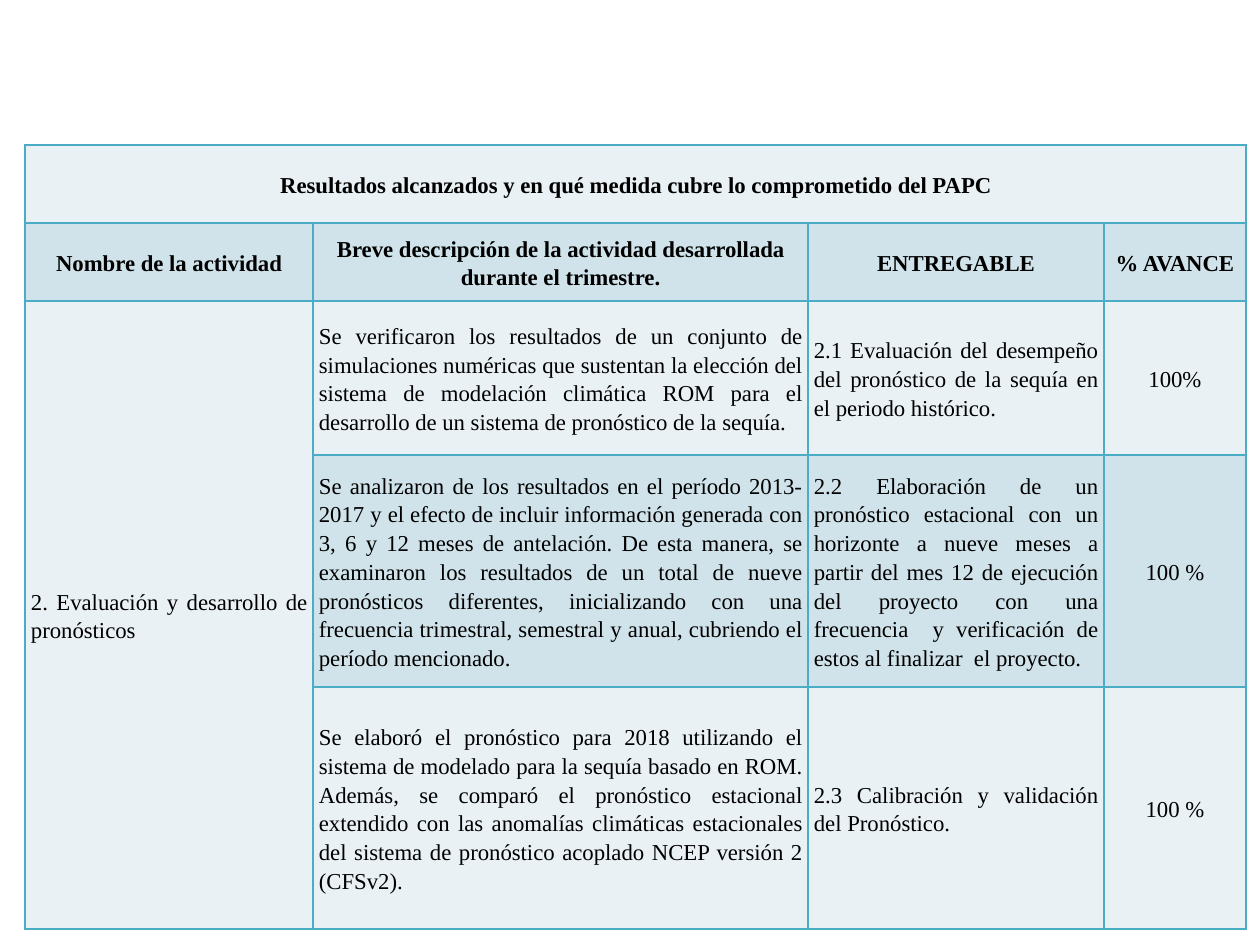
from dataclasses import dataclass

from lxml import etree
from pptx import Presentation
from pptx.dml.color import RGBColor
from pptx.enum.text import MSO_ANCHOR, PP_ALIGN
from pptx.oxml.ns import qn
from pptx.util import Pt

CENTER = PP_ALIGN.CENTER
JUSTIFY = PP_ALIGN.JUSTIFY
MIDDLE = MSO_ANCHOR.MIDDLE

EMU_PER_PX = 914400 / 126
BLANK_LAYOUT = 6


def px(length):
    return round(length * EMU_PER_PX)


@dataclass(frozen=True)
class Theme:
    font: str = "Times New Roman"
    size: int = 13
    text: str = "000000"
    light_band: str = "E9F1F5"
    dark_band: str = "D0E3EA"
    border: str = "4BACC6"
    border_width: int = 1


def apply_format(target, values):
    for name, value in values.items():
        setattr(target, name, value)


class SlideBuilder:
    """Holds the theme and the slide being built."""

    def __init__(self, slide, theme):
        self.slide = slide
        self.theme = theme

    def add_borders(self, cell):
        properties = cell._tc.get_or_add_tcPr()
        for side in ("lnL", "lnR", "lnT", "lnB"):
            line = etree.SubElement(properties, qn(f"a:{side}"))
            line.set("w", str(Pt(self.theme.border_width)))
            fill = etree.SubElement(line, qn("a:solidFill"))
            etree.SubElement(fill, qn("a:srgbClr")).set("val", self.theme.border)

    def style_cell(self, cell, fill):
        self.add_borders(cell)
        cell.fill.solid()
        cell.fill.fore_color.rgb = RGBColor.from_string(fill)
        apply_format(cell, {
            "vertical_anchor": MIDDLE,
            "margin_left": px(6), "margin_right": px(6),
            "margin_top": 0, "margin_bottom": 0,
        })

    def write_cell(self, cell, text, alignment, bold):
        paragraph = cell.text_frame.paragraphs[0]
        apply_format(paragraph, {
            "alignment": alignment, "line_spacing": 1.15, "space_after": Pt(6),
        })
        run = paragraph.add_run()
        run.text = text
        apply_format(run.font, {
            "name": self.theme.font, "size": Pt(self.theme.size), "bold": bold,
        })
        run.font.color.rgb = RGBColor.from_string(self.theme.text)

    def add_results_table(self, left, top, widths, heights, rows, merges):
        frame = self.slide.shapes.add_table(
            len(heights), len(widths), px(left), px(top),
            px(sum(widths)), px(sum(heights)))
        table = frame.table
        for column, width in zip(table.columns, widths):
            column.width = px(width)
        for row, height in zip(table.rows, heights):
            row.height = px(height)

        # Alternating bands; the activity column keeps the light band below the headings
        last_column = len(widths) - 1
        for row_index, texts in enumerate(rows):
            heading = row_index < HEADING_ROWS
            for column_index, text in enumerate(texts):
                cell = table.cell(row_index, column_index)
                dark = row_index % 2 == 1 and (heading or column_index > 0)
                self.style_cell(
                    cell, self.theme.dark_band if dark else self.theme.light_band)
                if text:
                    centered = heading or column_index == last_column
                    self.write_cell(
                        cell, text, CENTER if centered else JUSTIFY, heading)

        for first, last in merges:
            table.cell(*first).merge(table.cell(*last))


HEADING_ROWS = 2
COLUMN_WIDTHS = [288, 495, 296, 142]
ROW_HEIGHTS = [78, 78, 154, 232, 242]
MERGES = [((0, 0), (0, 3)), ((2, 0), (4, 0))]
ROWS = [
    ["Resultados alcanzados y en qué medida cubre lo comprometido del PAPC",
     "", "", ""],
    ["Nombre de la actividad",
     "Breve descripción de la actividad desarrollada durante el trimestre.",
     "ENTREGABLE",
     "% AVANCE"],
    ["2. Evaluación y desarrollo de pronósticos",
     "Se verificaron los resultados de un conjunto de simulaciones numéricas que "
     "sustentan la elección del sistema de modelación climática ROM para el "
     "desarrollo de un sistema de pronóstico de la sequía.",
     "2.1 Evaluación del desempeño del pronóstico de la sequía en el periodo "
     "histórico.",
     "100%"],
    ["",
     "Se analizaron de los resultados en el período 2013-2017 y el efecto de "
     "incluir información generada con 3, 6 y 12 meses de antelación. De esta "
     "manera, se examinaron los resultados de un total de nueve pronósticos "
     "diferentes, inicializando con una frecuencia trimestral, semestral y anual, "
     "cubriendo el período mencionado.",
     "2.2 Elaboración de un pronóstico estacional con un horizonte a nueve meses a "
     "partir del mes 12 de ejecución del proyecto con una frecuencia  y "
     "verificación de estos al finalizar  el proyecto.",
     "100 %"],
    ["",
     "Se elaboró el pronóstico para 2018 utilizando el sistema de modelado para la "
     "sequía basado en ROM. Además, se comparó el pronóstico estacional extendido "
     "con las anomalías climáticas estacionales del sistema de pronóstico acoplado "
     "NCEP versión 2 (CFSv2).",
     "2.3 Calibración y validación del Pronóstico.",
     "100 %"],
]


def main():
    presentation = Presentation()
    presentation.slide_width = px(1260)
    presentation.slide_height = px(945)
    slide = presentation.slides.add_slide(presentation.slide_layouts[BLANK_LAYOUT])

    # Progress table
    builder = SlideBuilder(slide, Theme())
    builder.add_results_table(25, 145, COLUMN_WIDTHS, ROW_HEIGHTS, ROWS, MERGES)

    presentation.save("out.pptx")


if __name__ == "__main__":
    main()
